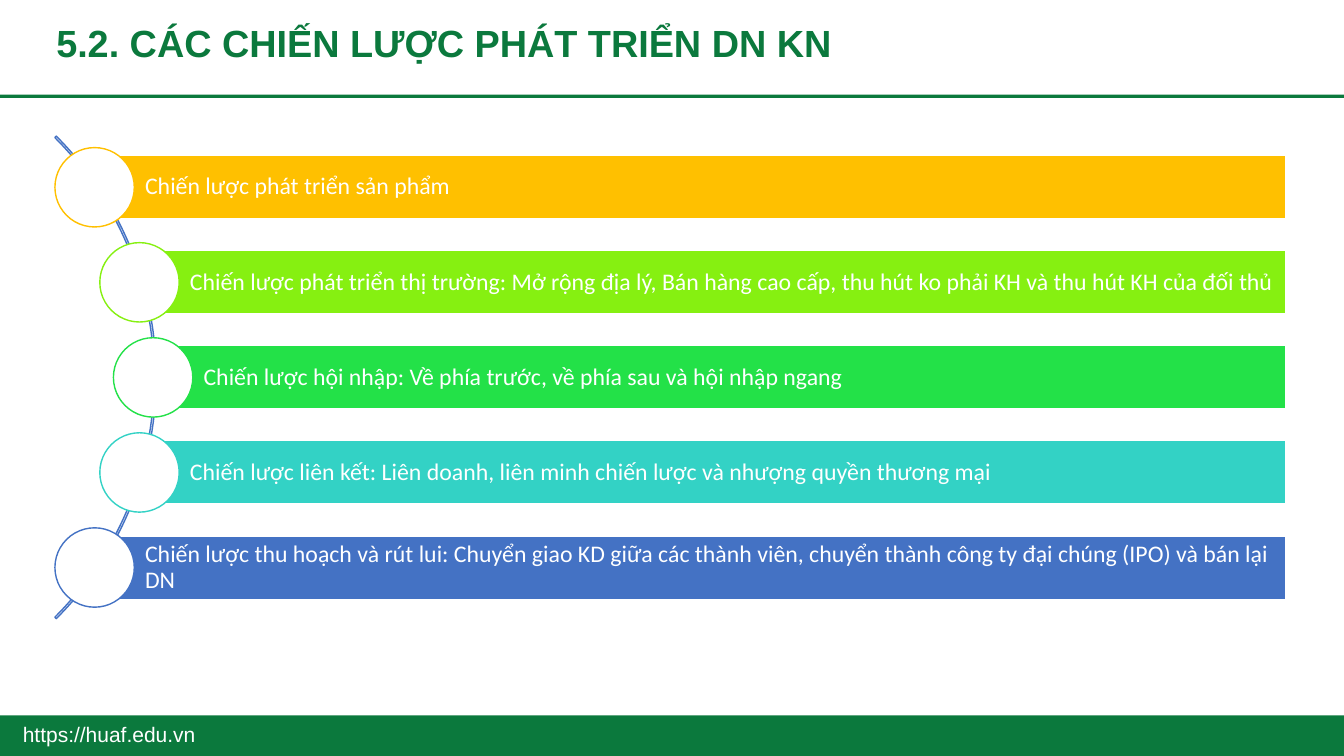
from math import sqrt

from pptx import Presentation
from pptx.dml.color import RGBColor
from pptx.enum.shapes import MSO_SHAPE
from pptx.enum.text import MSO_ANCHOR, MSO_AUTO_SIZE, PP_ALIGN
from pptx.util import Pt

GREEN, BLUE, WHITE = "0B793D", "4472C4", "FFFFFF"


def add_figure(kind, left, top, width, height, fill=None, line=None):
    shape = slide.shapes.add_shape(kind, Pt(left), Pt(top), Pt(width), Pt(height))
    shape.shadow.inherit = False
    if fill:
        shape.fill.solid()
        shape.fill.fore_color.rgb = RGBColor.from_string(fill)
    else:
        shape.fill.background()
    if line:
        shape.line.color.rgb = RGBColor.from_string(line)
        shape.line.width = Pt(1)
    else:
        shape.line.fill.background()
    return shape


def write_text(shape, text, size, font, color, align, anchor, bold=False):
    frame = shape.text_frame
    frame.text = text
    frame.word_wrap = True
    frame.auto_size = MSO_AUTO_SIZE.NONE
    frame.vertical_anchor = anchor
    paragraph = frame.paragraphs[0]
    paragraph.alignment = align
    paragraph.line_spacing = 0.9
    run = paragraph.runs[0]
    run.font.size = Pt(size)
    run.font.name = font
    run.font.bold = bold
    run.font.color.rgb = RGBColor.from_string(color)


presentation = Presentation()
presentation.slide_width, presentation.slide_height = Pt(960), Pt(540)
slide = presentation.slides.add_slide(presentation.slide_layouts[0])
subtitle = slide.placeholders[1]
subtitle.element.getparent().remove(subtitle.element)

# Title and the rule under it
title = slide.shapes.title
title.left, title.top, title.width, title.height = Pt(33), Pt(13), Pt(891), Pt(37.5)
write_text(title, "5.2. CÁC CHIẾN LƯỢC PHÁT TRIỂN DN KN", 27, "Arial", GREEN,
           PP_ALIGN.LEFT, MSO_ANCHOR.BOTTOM, bold=True)
add_figure(MSO_SHAPE.RECTANGLE, 0, 67.7, 960, 2.2, GREEN)

# Footer band with the web address
add_figure(MSO_SHAPE.RECTANGLE, 0, 511, 960, 29, GREEN)
address = slide.shapes.add_textbox(Pt(0), Pt(511), Pt(156), Pt(29))
write_text(address, "https://huaf.edu.vn", 15, "Arial", WHITE,
           PP_ALIGN.CENTER, MSO_ANCHOR.MIDDLE)

# Arc that carries the circles
arc_x, arc_y, arc_radius = -132.1, 269.6, 243.7
arc = add_figure(MSO_SHAPE.BLOCK_ARC, arc_x - arc_radius, arc_y - arc_radius,
                 2 * arc_radius, 2 * arc_radius, line=BLUE)
for index, value in enumerate((189, 27, 0.003)):
    arc.adjustments[index] = value

# Strategies: each bar starts at the centre of its circle on the arc
strategies = [
    ("Chiến lược phát triển sản phẩm", "FFC000"),
    ("Chiến lược phát triển thị trường: Mở rộng địa lý, Bán hàng cao cấp, "
     "thu hút ko phải KH và thu hút KH của đối thủ", "86F011"),
    ("Chiến lược hội nhập: Về phía trước, về phía sau và hội nhập ngang", "23E148"),
    ("Chiến lược liên kết: Liên doanh, liên minh chiến lược và nhượng quyền "
     "thương mại", "33D2C5"),
    ("Chiến lược thu hoạch và rút lui: Chuyển giao KD giữa các thành viên, "
     "chuyển thành công ty đại chúng (IPO) và bán lại DN", BLUE),
]
bar_right, bar_height, diameter, pitch, circle_track = 918.6, 45.3, 56.7, 67.9, 241.5
for index, (text, color) in enumerate(strategies):
    offset = (index - 2) * pitch
    center_x = arc_x + sqrt(circle_track ** 2 - offset ** 2)
    center_y = arc_y + offset
    bar = add_figure(MSO_SHAPE.RECTANGLE, center_x, center_y - bar_height / 2,
                     bar_right - center_x, bar_height, color, WHITE)
    frame = bar.text_frame
    frame.margin_left = Pt(36)
    frame.margin_right = frame.margin_top = frame.margin_bottom = Pt(3.6)
    write_text(bar, text, 17, "Calibri", WHITE, PP_ALIGN.LEFT, MSO_ANCHOR.MIDDLE)
    add_figure(MSO_SHAPE.OVAL, center_x - diameter / 2, center_y - diameter / 2,
               diameter, diameter, WHITE, color)

presentation.save("out.pptx")
